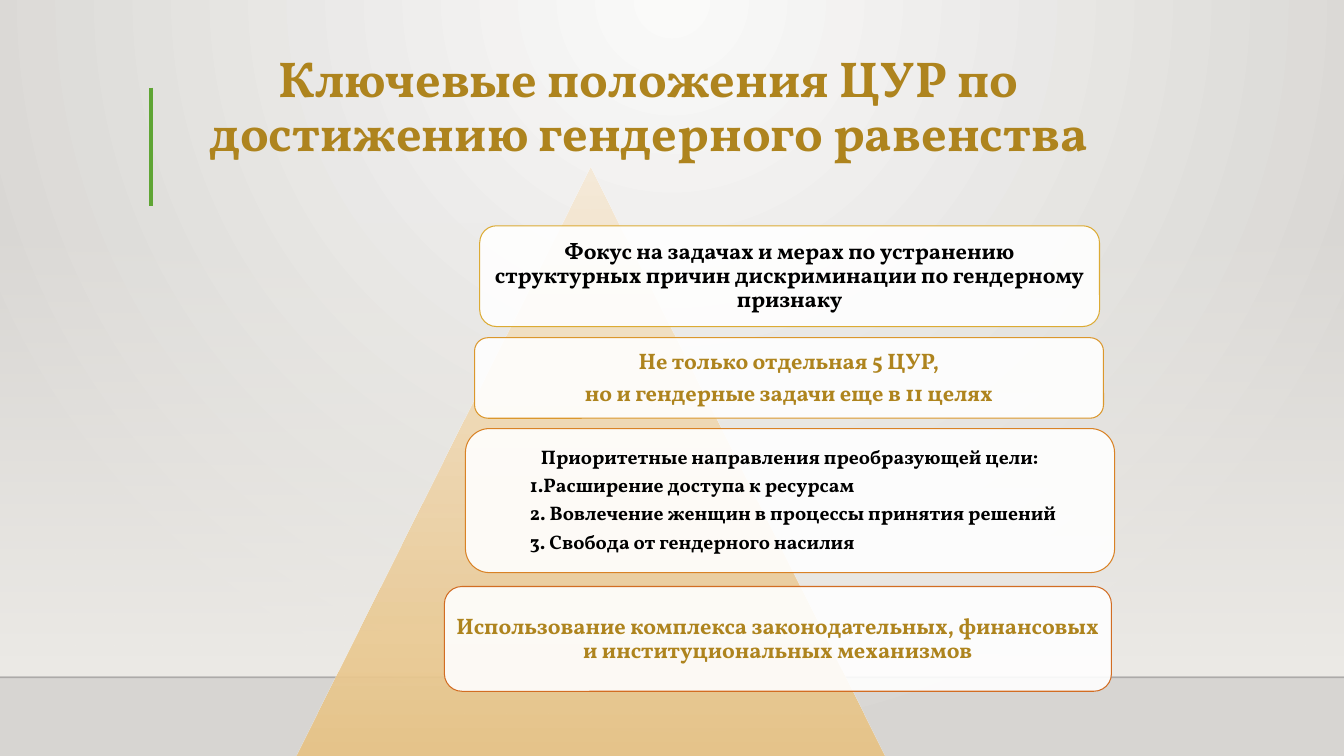
from dataclasses import dataclass
from lxml import etree
from pptx import Presentation
from pptx.dml.color import RGBColor
from pptx.enum.shapes import MSO_CONNECTOR, MSO_SHAPE
from pptx.enum.text import MSO_ANCHOR, PP_ALIGN
from pptx.oxml.ns import qn
from pptx.util import Cm, Pt

RECT = MSO_SHAPE.RECTANGLE
ROUND = MSO_SHAPE.ROUNDED_RECTANGLE
PEAK = MSO_SHAPE.ISOSCELES_TRIANGLE
LINE = MSO_CONNECTOR.STRAIGHT
MIDDLE, BOTTOM = MSO_ANCHOR.MIDDLE, MSO_ANCHOR.BOTTOM
CENTER, LEFT = PP_ALIGN.CENTER, PP_ALIGN.LEFT


@dataclass(frozen=True)
class Theme:
    """Colours, font and type sizes of the slide."""
    font: str = "Vollkorn"
    gold: str = "AE841E"
    black: str = "000000"
    white: str = "FFFFFF"
    green: str = "5FA534"
    back: tuple = ("FAFAF9", "D7D5D2")
    wall: tuple = ("EDEBE7", "EDEBE7")
    peak: tuple = ("F6EAD9", "E8C385")
    title: int = 36
    body: int = 16
    small: int = 14


THEME = Theme()
WIDTH, HEIGHT = 33.87, 19.05

BOXES = [
    ((12.09, 5.69, 15.62, 2.54), "DCAB34", THEME.black, THEME.body,
     ["Фокус на задачах и мерах по устранению структурных причин "
      "дискриминации по гендерному признаку"], []),
    ((11.96, 8.51, 15.85, 2.03), "DB972C", THEME.gold, THEME.body,
     ["Не только отдельная 5 ЦУР,",
      "но и гендерные задачи еще в 11 целях"], []),
    ((11.73, 10.8, 16.36, 3.63), "D98225", THEME.black, THEME.small,
     ["Приоритетные направления преобразующей цели:"],
     ["1.Расширение доступа к ресурсам",
      "2. Вовлечение женщин в процессы принятия решений",
      "3. Свобода от гендерного насилия"]),
    ((11.2, 14.78, 16.81, 2.64), "D26D23", THEME.gold, THEME.body,
     ["Использование комплекса законодательных, "
      "финансовых и институциональных механизмов"], []),
]


def put(item, vals):
    """Set each attribute of item from a dict."""
    for name, val in vals.items():
        setattr(item, name, val)


def fade(item, *rates):
    """Give the colours of a shape their opacity in percent."""
    colors = list(item._element.spPr.iter(qn("a:srgbClr")))
    for color, rate in zip(colors, rates):
        etree.SubElement(color, qn("a:alpha")).set("val", str(rate * 1000))


def blend(fill, colors):
    """Fill with a two-colour gradient."""
    fill.gradient()
    for stop, color in zip(fill.gradient_stops, colors):
        stop.color.rgb = RGBColor.from_string(color)


def paint_back(slide):
    """Paint a round glow from the top centre of the slide."""
    blend(slide.background.fill, THEME.back)
    lin = next(slide._element.iter(qn("a:lin")))
    path = etree.Element(qn("a:path"), {"path": "circle"})
    edges = {"l": "43000", "t": "0", "r": "43000", "b": "100000"}
    etree.SubElement(path, qn("a:fillToRect"), edges)
    lin.getparent().replace(lin, path)


def add_form(slide, kind, place):
    """Add a preset shape without shadow or outline."""
    form = slide.shapes.add_shape(kind, *map(Cm, place))
    form.shadow.inherit = False
    form.line.fill.background()
    return form


def add_glow(slide, kind, place, colors, rates):
    """Add a shape that shades from top to bottom."""
    form = add_form(slide, kind, place)
    blend(form.fill, colors)
    form.fill.gradient_angle = 270
    fade(form, *rates)


def add_rule(slide, ends, color, width, rate=100):
    """Add a straight line."""
    rule = slide.shapes.add_connector(LINE, *map(Cm, ends))
    rule.line.color.rgb = RGBColor.from_string(color)
    rule.line.width = Pt(width)
    fade(rule, rate)
    etree.SubElement(rule._element.spPr, qn("a:effectLst"))


def write(frame, texts, color, size, items=(), after=0):
    """Write centred paragraphs, then indented list items."""
    lines = [(text, CENTER) for text in texts]
    lines += [(text, LEFT) for text in items]
    for num, (text, align) in enumerate(lines):
        para = frame.add_paragraph() if num else frame.paragraphs[0]
        para.text = text
        if align == LEFT:
            para._p.get_or_add_pPr().set("marL", str(Cm(1.28)))
        put(para, {"alignment": align, "line_spacing": 0.9,
                   "space_after": Pt(after)})
        font = para.runs[0].font
        put(font, {"name": THEME.font, "size": Pt(size), "bold": True})
        font.color.rgb = RGBColor.from_string(color)


def add_title(slide, place, text):
    """Add the slide heading."""
    frame = slide.shapes.add_textbox(*map(Cm, place)).text_frame
    put(frame, {"word_wrap": True, "vertical_anchor": BOTTOM})
    write(frame, [text], THEME.gold, THEME.title)


def add_box(slide, place, edge, color, size, texts, items):
    """Add a rounded box with its text."""
    box = add_form(slide, ROUND, place)
    box.fill.solid()
    box.fill.fore_color.rgb = RGBColor.from_string(THEME.white)
    fade(box, 90)
    box.line.color.rgb = RGBColor.from_string(edge)
    box.line.width = Pt(0.75)
    sides = ("left", "right", "top", "bottom")
    put(box.text_frame, {f"margin_{side}": Cm(0.17) for side in sides})
    put(box.text_frame, {"word_wrap": True, "vertical_anchor": MIDDLE})
    write(box.text_frame, texts, color, size, items, size * 0.35)


def main():
    """Build and save the slide."""
    deck = Presentation()
    put(deck, {"slide_width": Cm(WIDTH), "slide_height": Cm(HEIGHT)})
    slide = deck.slides.add_slide(deck.slide_layouts[6])
    paint_back(slide)
    add_glow(slide, RECT, (0, 5.59, WIDTH, 11.43), THEME.wall, (0, 100))
    add_rule(slide, (0, 17.07, WIDTH, 17.07), THEME.black, 1, 20)
    add_rule(slide, (3.81, 2.21, 3.81, 5.18), THEME.green, 3)
    add_title(slide, (2.84, 1.04, 27, 3.18),
              "Ключевые положения ЦУР по достижению гендерного равенства")
    add_glow(slide, PEAK, (7.47, 4.22, 14.83, 14.83), THEME.peak, (100, 92))
    for box in BOXES:
        add_box(slide, *box)
    deck.save("out.pptx")


if __name__ == "__main__":
    main()
